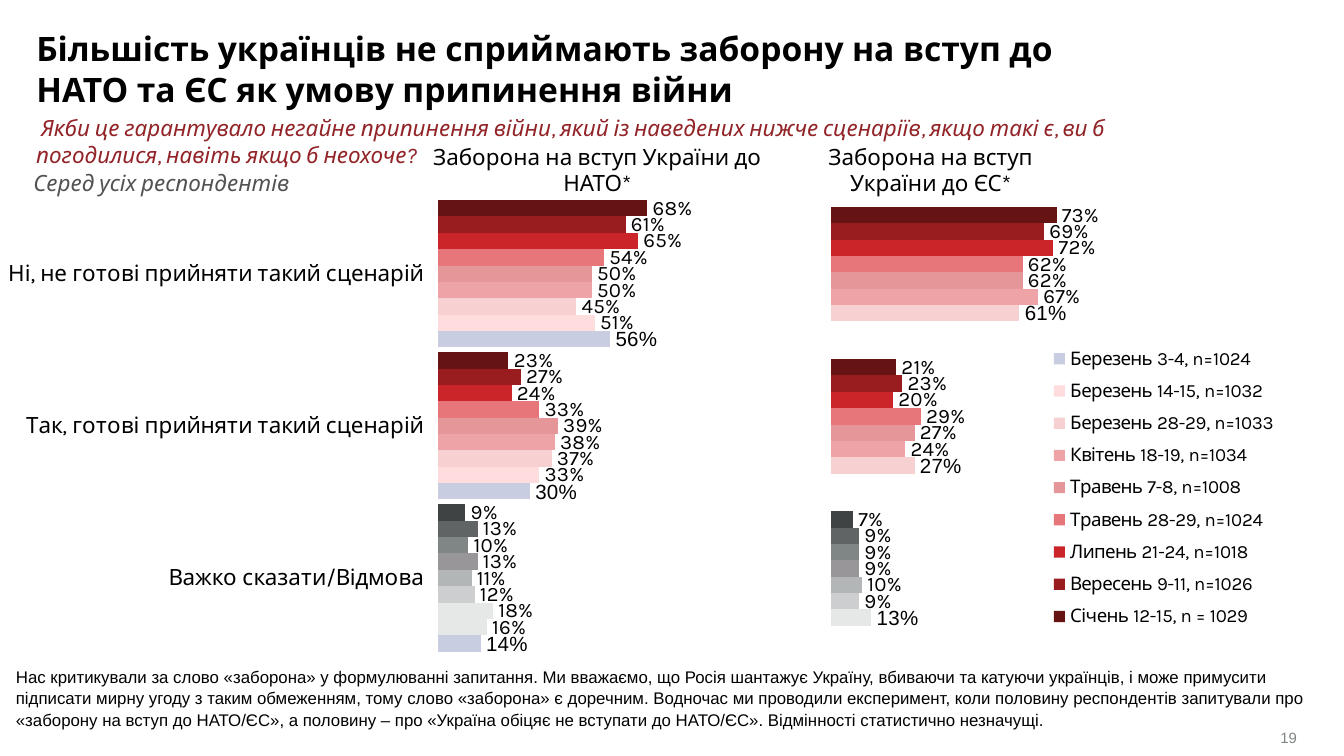
import pptx
import pptx.util
import pptx.chart.data
import pptx.dml.color
import pptx.enum.chart
import pptx.enum.text
import pptx.oxml

WIDE = 10
HIGH = WIDE * 9 / 16
INK = {"black": "000000", "wine": "922428", "slate": "535154", "mist": "808585"}
REDS = ["661314", "991C1F", "CC2529", "E67679", "E59699",
        "EEA4A6", "F7D1D2", "FFDDDE", "C8CDE2"]
GREYS = ["404344", "606464", "808586", "999699", "B3B6B6",
         "CCCECF", "E6E7E7", "E6E7E7", "C8CDE2"]
WAVES = ["Січень 12-15, n = 1029", "Вересень 9-11, n=1026", "Липень 21-24, n=1018",
         "Травень 28-29, n=1024", "Травень 7-8, n=1008", "Квітень 18-19, n=1034",
         "Березень 28-29, n=1033", "Березень 14-15, n=1032", "Березень 3-4, n=1024"]
PLAIN = [f"Series {num}" for num in range(1, len(WAVES) + 1)]

# One row per answer, one value per wave
ANSWERS = ["Ні, не готові прийняти такий сценарій",
           "Так, готові прийняти такий сценарій", "Важко сказати/Відмова"]
NATO = [[0.68, 0.61, 0.65, 0.54, 0.5, 0.5, 0.45, 0.51, 0.56],
        [0.23, 0.27, 0.24, 0.33, 0.39, 0.38, 0.37, 0.33, 0.3],
        [0.09, 0.13, 0.1, 0.13, 0.11, 0.12, 0.18, 0.16, 0.14]]
EU = [[0.73, 0.69, 0.72, 0.62, 0.62, 0.67, 0.61, None, None],
      [0.21, 0.23, 0.2, 0.29, 0.27, 0.24, 0.27, None, None],
      [0.07, 0.09, 0.09, 0.09, 0.1, 0.09, 0.13, None, None]]

TITLE = "Більшість українців не сприймають заборону на вступ до НАТО та ЄС як умову припинення війни"
ASK = (" Якби це гарантувало негайне припинення війни, який із наведених нижче сценаріїв, "
       "якщо такі є, ви б погодилися, навіть якщо б неохоче?")
NOTE = ("Нас критикували за слово «заборона» у формулюванні запитання. Ми вважаємо, що Росія "
        "шантажує Україну, вбиваючи та катуючи українців, і може примусити підписати мирну угоду "
        "з таким обмеженням, тому слово «заборона» є доречним. Водночас ми проводили експеримент, "
        "коли половину респондентів запитували про «заборону на вступ до НАТО/ЄС», а половину – "
        "про «Україна обіцяє не вступати до НАТО/ЄС». Відмінності статистично незначущі.")
HEADS = ["Заборона на вступ України до НАТО*", "Заборона на вступ України до ЄС*"]

ALIGN = pptx.enum.text.PP_ALIGN
ANCHOR = pptx.enum.text.MSO_ANCHOR


def area(left, top, wide, high):
    """Turn percent of the slide's size into lengths."""
    return [pptx.util.Inches(part * size / 100) for part, size in
            zip((left, top, wide, high), (WIDE, HIGH, WIDE, HIGH))]


def apply(item, **values):
    for key, value in values.items():
        setattr(item, key, value)


def ink(font, size, color="black", name="Karla", **more):
    apply(font, size=pptx.util.Pt(size), name=name, **more)
    font.color.rgb = pptx.dml.color.RGBColor.from_string(INK[color])


def write(shape, text, size, pad=False, align=ALIGN.LEFT, anchor=ANCHOR.TOP,
          space=1.0, **look):
    frame = shape.text_frame
    side, edge = [pptx.util.Inches(gap if pad else 0) for gap in (0.1, 0.05)]
    apply(frame, text=text, word_wrap=True, vertical_anchor=anchor,
          auto_size=pptx.enum.text.MSO_AUTO_SIZE.NONE, margin_left=side,
          margin_right=side, margin_top=edge, margin_bottom=edge)
    para = frame.paragraphs[0]
    apply(para, alignment=align, line_spacing=space)
    ink(para.runs[0].font, size, **look)


def label(slide, box, text, size, **look):
    write(slide.shapes.add_textbox(*area(*box)), text, size, **look)


def heads(slide, box, widths):
    table = slide.shapes.add_table(1, len(HEADS), *area(*box)).table
    apply(table, first_row=False, horz_banding=False)
    # Style without fills and grid lines
    table._tbl.tblPr[0].text = "{2D5ABB26-0587-4C30-8999-92F81FD0307C}"
    for col, (text, wide) in enumerate(zip(HEADS, widths)):
        table.columns[col].width = pptx.util.Inches(wide)
        cell = table.cell(0, col)
        apply(cell, text=text, vertical_anchor=ANCHOR.MIDDLE)
        cell.fill.background()
        para = cell.text_frame.paragraphs[0]
        para.alignment = ALIGN.CENTER
        ink(para.runs[0].font, 12)


def place(parent, index, inner, **spots):
    """Give a chart part a fixed place, in shares of the chart."""
    for old in parent.xpath("./c:layout"):
        parent.remove(old)
    target = '<c:layoutTarget val="inner"/>' if inner else ""
    modes = '<c:xMode val="edge"/><c:yMode val="edge"/>'
    sizes = "".join(f'<c:{key} val="{val}"/>' for key, val in spots.items())
    parent.insert(index, pptx.oxml.parse_xml(
        '<c:layout xmlns:c="http://schemas.openxmlformats.org/drawingml/2006/chart">'
        f"<c:manualLayout>{target}{modes}{sizes}</c:manualLayout></c:layout>"))


def paint(part, color):
    part.format.fill.solid()
    part.format.fill.fore_color.rgb = pptx.dml.color.RGBColor.from_string(color)


def bars(slide, box, cats, names, rows):
    data = pptx.chart.data.CategoryChartData(number_format="0%")
    data.categories = cats
    for name, values in zip(names, zip(*rows)):
        data.add_series(name, values)
    kinds = pptx.enum.chart
    chart = slide.shapes.add_chart(kinds.XL_CHART_TYPE.BAR_CLUSTERED, *area(*box), data).chart
    apply(chart, has_title=False, has_legend=False)
    ink(chart.font, 11, name="Arial")
    apply(chart.plots[0], gap_width=30, overlap=0, vary_by_categories=False)
    apply(chart.value_axis, visible=False, minimum_scale=0, maximum_scale=1,
          has_major_gridlines=False)
    chart.category_axis.reverse_order = True
    place(chart._chartSpace.xpath(".//c:plotArea")[0], 0, True,
          x=0.487, y=0.023, w=0.337, h=0.954)

    # Red bars, with a grey one for the undecided
    shown = [wave for wave in chart.plots[0].series if wave.values[0] is not None]
    for wave, red, grey in zip(chart.plots[0].series, REDS, GREYS):
        paint(wave, red)
        wave.invert_if_negative = False
        if wave.values[0] is None:
            continue
        paint(wave.points[2], grey)
        tags = wave.data_labels
        apply(tags, show_value=True, number_format="0%", number_format_is_linked=False,
              position=kinds.XL_LABEL_POSITION.OUTSIDE_END)
        ink(tags.font, 11, name="Arial" if wave.name == shown[-1].name else "Karla")
    return chart


def legend(chart):
    chart.has_legend = True
    key = chart.legend
    apply(key, position=pptx.enum.chart.XL_LEGEND_POSITION.RIGHT, include_in_layout=False)
    ink(key.font, 10)
    place(key._element, 1, False, x=0.72, y=0.3, w=0.26, h=0.63)


def main():
    deck = pptx.Presentation()
    apply(deck, slide_width=pptx.util.Inches(WIDE), slide_height=pptx.util.Inches(HIGH))
    slide = deck.slides.add_slide(deck.slide_layouts[5])

    # Title and question
    title = slide.shapes.title
    apply(title, **dict(zip(("left", "top", "width", "height"), area(2.7, 3.75, 80.3, 10.9))))
    write(title, TITLE, 18, bold=True)
    label(slide, (2.7, 15.1, 80.3, 7.1), ASK, 12, color="wine", italic=True)
    label(slide, (1.5, 21.5, 27.6, 5.3), "Серед усіх респондентів", 12, pad=True,
          color="slate", italic=True)

    # Column heads and charts
    heads(slide, (31.1, 18.3, 49.6, 7.3), (2.67, 2.29))
    union = bars(slide, (28.7, 25.6, 68.1, 63.3), ["1", "2", "3"], WAVES, EU)
    union.category_axis.visible = False
    legend(union)
    axis = bars(slide, (-0.6, 24.7, 68.1, 63.3), ANSWERS, PLAIN, NATO).category_axis
    axis.format.line.fill.background()
    ink(axis.tick_labels.font, 12)

    # Note and page number
    label(slide, (0.2, 87.1, 98.8, 10.5), NOTE, 9, pad=True, space=1.07, name="Arial")
    label(slide, (82.3, 96.2, 14.2, 2.8), "19", 8, align=ALIGN.RIGHT,
          anchor=ANCHOR.MIDDLE, color="mist", name="Arial")
    deck.save("out.pptx")


if __name__ == "__main__":
    main()
